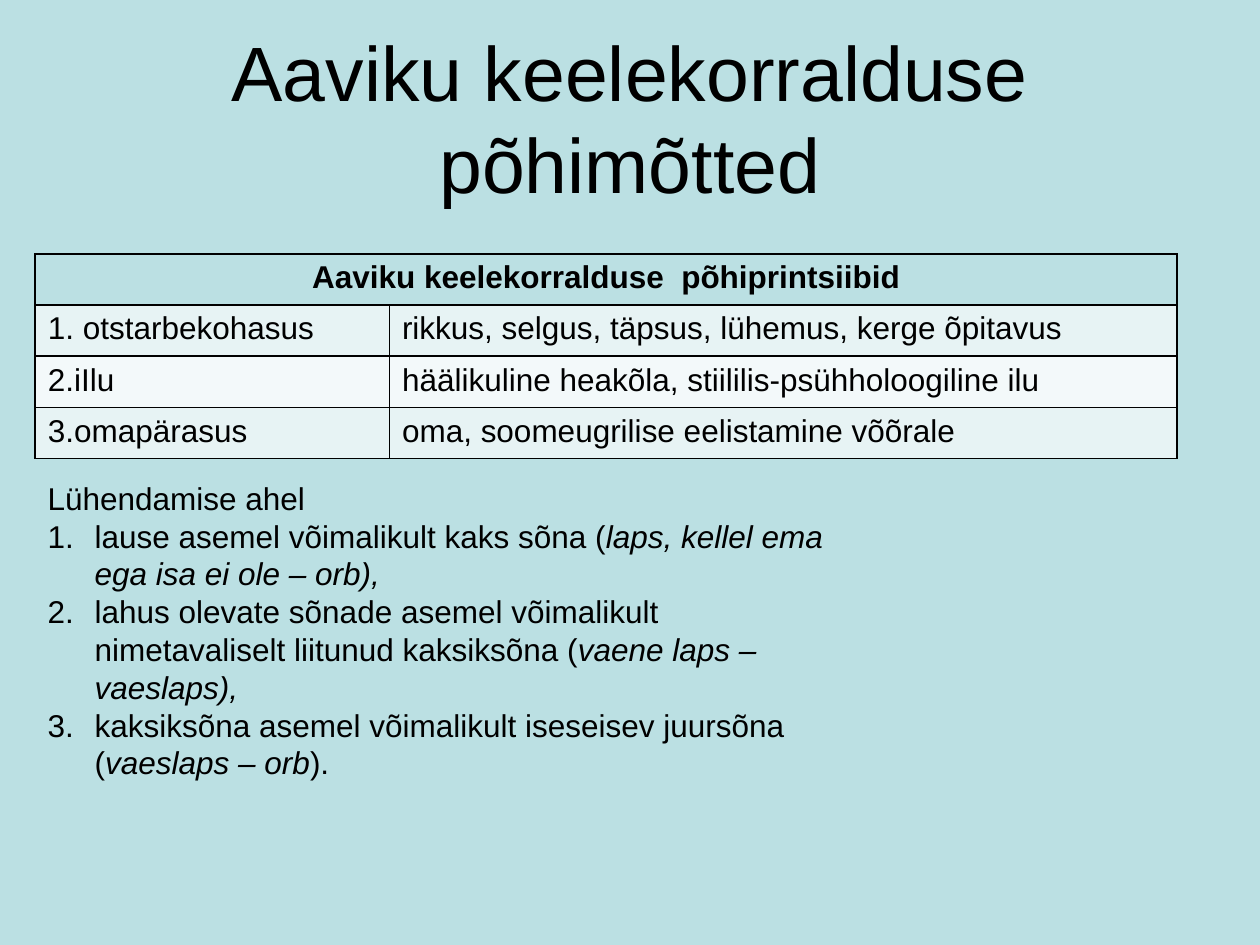
import pptx
import pptx.dml.color
import pptx.enum.text
import pptx.oxml
import pptx.oxml.ns
import pptx.util
from pptx.util import Cm

FONT = "Arial"
INK = "000000"
BACKGROUND = "BBE0E3"
BANDS = ["E7F3F4", "F3F9FA"]
LEFT = Cm(0.71)
CENTER = pptx.enum.text.PP_ALIGN.CENTER

PRINCIPLES = [
    ("1. otstarbekohasus", "rikkus, selgus, täpsus, lühemus, kerge õpitavus"),
    ("2.iIlu", "häälikuline heakõla, stiililis-psühholoogiline ilu"),
    ("3.omapärasus", "oma, soomeugrilise eelistamine võõrale"),
]
# Each step: plain text, italic example, plain ending
SHORTENING_STEPS = [
    ("lause asemel võimalikult kaks sõna (", "laps, kellel ema ega isa ei ole – orb),", ""),
    ("lahus olevate sõnade asemel võimalikult nimetavaliselt liitunud kaksiksõna (",
     "vaene laps – vaeslaps),", ""),
    ("kaksiksõna asemel võimalikult iseseisev juursõna (", "vaeslaps – orb", ")."),
]


def paint(fill, color):
    fill.solid()
    fill.fore_color.rgb = pptx.dml.color.RGBColor.from_string(color)


def style(paragraph, size, bold=False):
    font = paragraph.font
    font.name, font.size, font.bold = FONT, pptx.util.Pt(size), bold
    paint(font.fill, INK)


def add_text_frame(slide, left, top, width, height):
    frame = slide.shapes.add_textbox(left, top, width, height).text_frame
    frame.word_wrap = True
    return frame


def add_title(slide, title):
    frame = add_text_frame(slide, Cm(1.27), Cm(0.76), Cm(22.86), Cm(3.18))
    frame.vertical_anchor = pptx.enum.text.MSO_ANCHOR.MIDDLE
    heading = frame.paragraphs[0]
    heading.text = title
    heading.alignment = CENTER
    style(heading, 44)


def add_borders(cell):
    properties = cell._tc.get_or_add_tcPr()
    for side in "LRTB":
        properties.append(pptx.oxml.parse_xml(
            f'<a:ln{side} {pptx.oxml.ns.nsdecls("a")} w="12700"><a:solidFill>'
            f'<a:srgbClr val="{INK}"/></a:solidFill></a:ln{side}>'))


def fill_cell(cell, text, color, bold=False):
    cell.text = text
    style(cell.text_frame.paragraphs[0], 18, bold)
    add_borders(cell)
    paint(cell.fill, color)


def add_principles_table(slide, header, principles):
    widths = [Cm(7.14), Cm(15.88)]
    row_height = Cm(1.03)
    row_count = len(principles) + 1
    table = slide.shapes.add_table(row_count, len(widths), LEFT, Cm(5.12),
                                   sum(widths), row_height * row_count).table
    for column, width in zip(table.columns, widths):
        column.width = width
    for row in table.rows:
        row.height = row_height

    header_cell = table.cell(0, 0)
    header_cell.merge(table.cell(0, 1))
    fill_cell(header_cell, header, BACKGROUND, bold=True)
    header_cell.text_frame.paragraphs[0].alignment = CENTER
    add_borders(table.cell(0, 1))
    for row, principle in enumerate(principles, start=1):
        for column, text in enumerate(principle):
            fill_cell(table.cell(row, column), text, BANDS[(row - 1) % 2])


def number(paragraph):
    """Give the paragraph an automatic number and a hanging indent."""
    indent = Cm(0.95)
    properties = paragraph._p.get_or_add_pPr()
    properties.set("marL", str(indent))
    properties.set("indent", str(-indent))
    properties.insert(0, pptx.oxml.parse_xml(
        f'<a:buAutoNum {pptx.oxml.ns.nsdecls("a")} type="arabicPeriod"/>'))


def add_shortening_list(slide, heading, steps):
    frame = add_text_frame(slide, LEFT, Cm(9.53), Cm(16.41), Cm(6.4))
    frame.paragraphs[0].text = heading
    style(frame.paragraphs[0], 18)
    for step in steps:
        paragraph = frame.add_paragraph()
        style(paragraph, 18)
        number(paragraph)
        for text, italic in zip(step, (False, True, False)):
            if text:
                run = paragraph.add_run()
                run.text = text
                run.font.italic = italic


def main():
    presentation = pptx.Presentation()
    presentation.slide_width, presentation.slide_height = Cm(25.4), Cm(19.05)
    slide = presentation.slides.add_slide(presentation.slide_layouts[6])
    paint(slide.background.fill, BACKGROUND)
    add_title(slide, "Aaviku keelekorralduse põhimõtted")
    add_principles_table(slide, "Aaviku keelekorralduse  põhiprintsiibid", PRINCIPLES)
    add_shortening_list(slide, "Lühendamise ahel", SHORTENING_STEPS)
    presentation.save("out.pptx")


if __name__ == "__main__":
    main()
